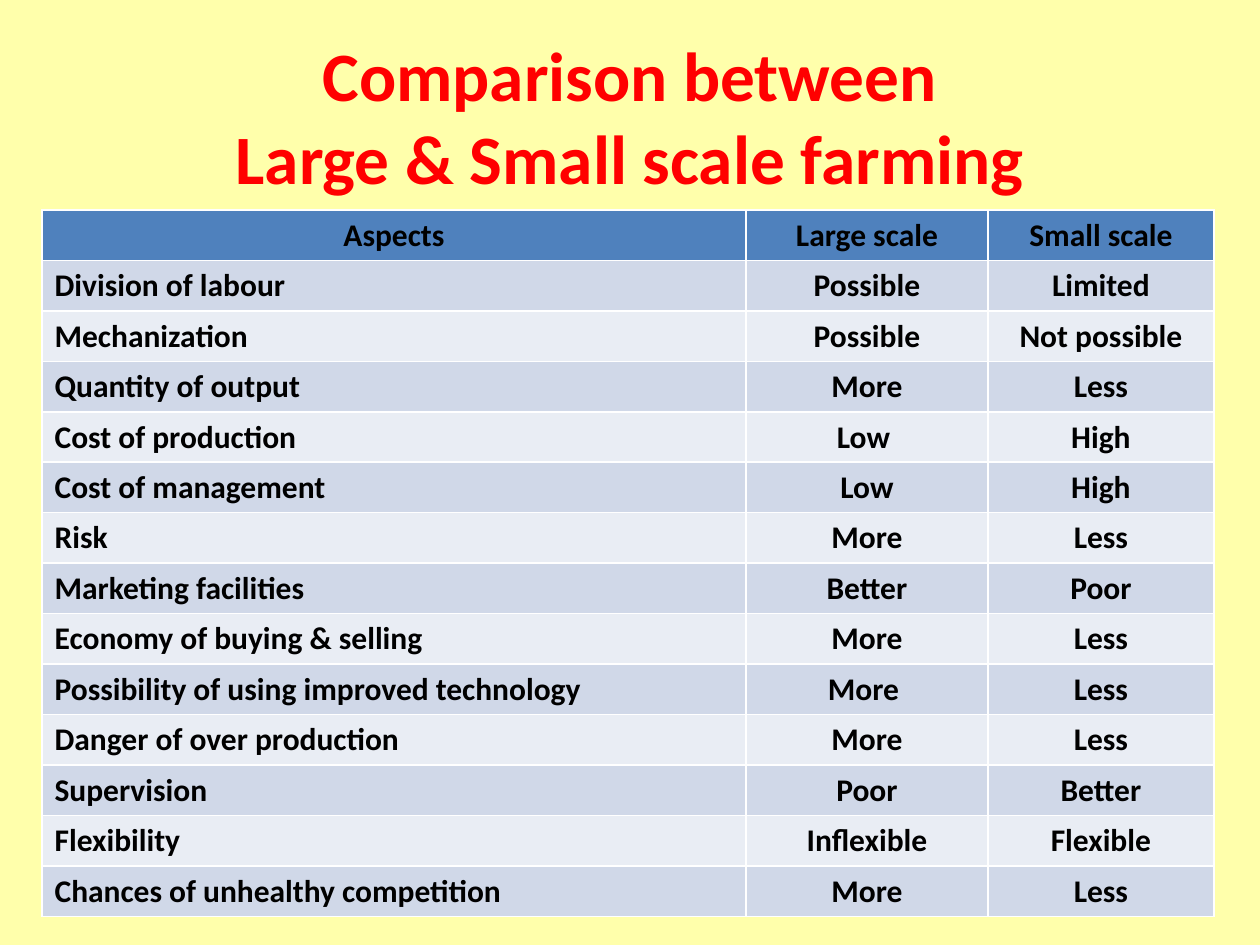
from pptx import Presentation
from pptx.dml.color import RGBColor
from pptx.enum.text import MSO_ANCHOR, PP_ALIGN
from pptx.util import Emu, Pt

CENTER, LEFT = PP_ALIGN.CENTER, PP_ALIGN.LEFT
MIDDLE = MSO_ANCHOR.MIDDLE
PX = 914400 // 126
FONT = "Calibri"
COLORS = {
    "background": "FFFFAB",
    "title": "FF0000",
    "text": "000000",
    "header": "4F81BD",
    "odd": "D0D8E8",
    "even": "E9EDF4",
}
COL_WIDTHS = [704, 242, 226]
ROW_HEIGHT = 50
ROWS = [
    ("Aspects", "Large scale", "Small scale"),
    ("Division of labour", "Possible", "Limited"),
    ("Mechanization", "Possible", "Not possible"),
    ("Quantity of output", "More", "Less"),
    ("Cost of production", "Low ", "High"),
    ("Cost of management", "Low", "High"),
    ("Risk", "More", "Less"),
    ("Marketing facilities", "Better", "Poor"),
    ("Economy of buying & selling", "More", "Less"),
    ("Possibility of using improved technology", "More ", "Less"),
    ("Danger of over production", "More", "Less"),
    ("Supervision", "Poor", "Better"),
    ("Flexibility", "Inflexible", "Flexible"),
    ("Chances of unhealthy competition", "More", "Less"),
]


def px(*values):
    """Turn pixel lengths into EMU."""
    return [Emu(v * PX) for v in values]


def style_paragraph(p, size, color, align):
    p.alignment = align
    p.font.name = FONT
    p.font.size = Pt(size)
    p.font.bold = True
    p.font.color.rgb = RGBColor.from_string(COLORS[color])


prs = Presentation()
prs.slide_width, prs.slide_height = px(1260, 945)
s = prs.slides.add_slide(prs.slide_layouts[6])
s.background.fill.solid()
s.background.fill.fore_color.rgb = RGBColor.from_string(COLORS["background"])

# Title
tf = s.shapes.add_textbox(*px(42, 63, 1176, 105)).text_frame
tf.word_wrap = True
tf.vertical_anchor = MIDDLE
p = tf.paragraphs[0]
p.text = "Comparison between\vLarge & Small scale farming"
style_paragraph(p, 39.6, "title", CENTER)

# Comparison table; the default table style draws its white borders
frame = s.shapes.add_table(
    len(ROWS), len(COL_WIDTHS),
    *px(42, 210, sum(COL_WIDTHS), ROW_HEIGHT * len(ROWS)))
table = frame.table
for column, width in zip(table.columns, px(*COL_WIDTHS)):
    column.width = width

for i, values in enumerate(ROWS):
    table.rows[i].height = px(ROW_HEIGHT)[0]
    fill = "header" if i == 0 else "odd" if i % 2 else "even"
    for j, value in enumerate(values):
        cell = table.cell(i, j)
        cell.fill.solid()
        cell.fill.fore_color.rgb = RGBColor.from_string(COLORS[fill])
        p = cell.text_frame.paragraphs[0]
        p.text = value
        style_paragraph(p, 18, "text", LEFT if i and j == 0 else CENTER)

prs.save("out.pptx")
